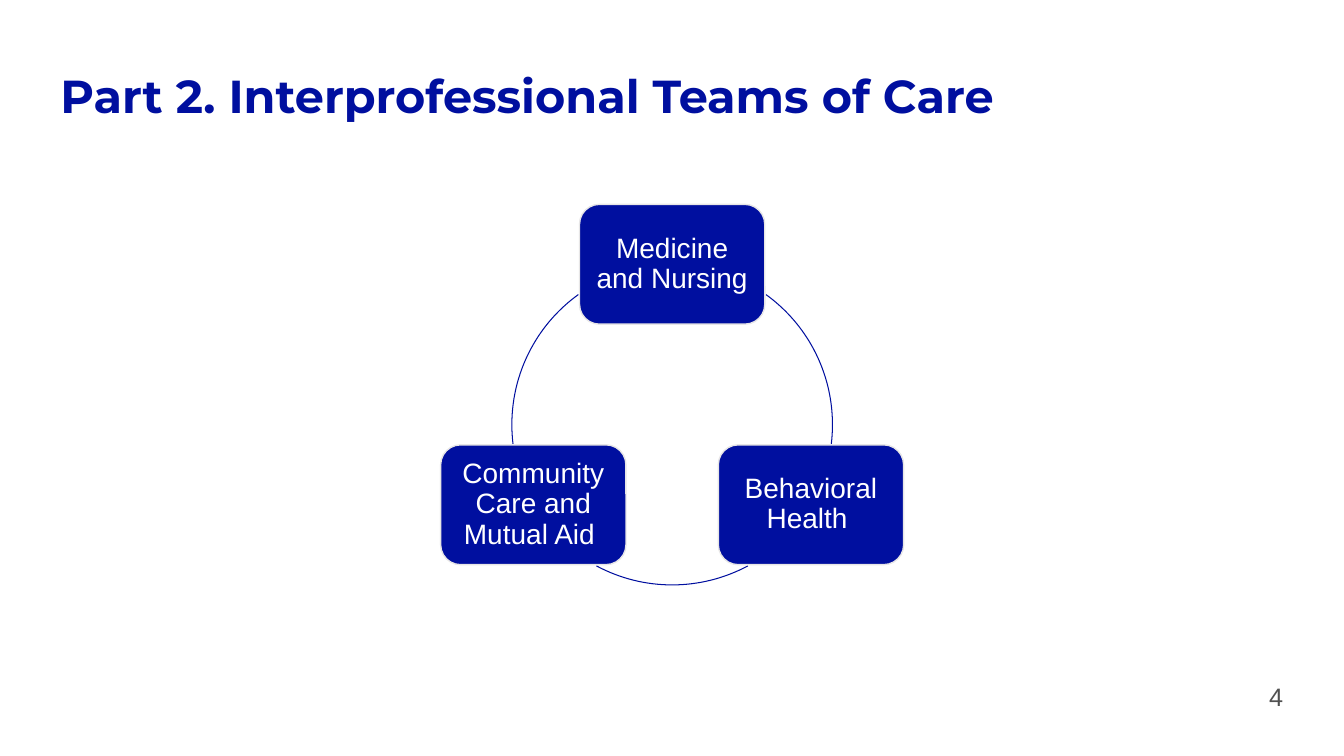
from math import cos, radians, sin

from pptx import Presentation
from pptx.dml.color import RGBColor
from pptx.enum.shapes import MSO_SHAPE
from pptx.enum.text import MSO_ANCHOR, MSO_AUTO_SIZE, PP_ALIGN
from pptx.oxml.ns import qn
from pptx.util import Cm, Pt

TITLE = "Part 2. Interprofessional Teams of Care"
PAGE_NUMBER = "4"
# Team name and its angle on the circle, clockwise from the right
TEAMS = [
    ("Medicine and Nursing", 270),
    ("Behavioral Health ", 30),
    ("Community Care and Mutual Aid ", 150),
]
# Start and end angles of the visible parts of the circle
ARCS = [(305.8, 6.9), (61.8, 118.2), (173.1, 234.2)]

COLORS = {"navy": "000F9F", "border": "E7E6E6", "white": "FFFFFF", "gray": "515151"}
CENTER_X, CENTER_Y, RADIUS = 16.94, 10.7, 4.04
TEAM_WIDTH, TEAM_HEIGHT = 4.67, 3.02
ARC_UNITS_PER_DEGREE = 0.6

TITLE_FORMAT = {"name": "Montserrat", "size": Pt(33), "bold": True}
TEAM_FORMAT = {"name": "Arial", "size": Pt(20)}
NUMBER_FORMAT = {"name": "Arial", "size": Pt(18)}


def color(name):
    return RGBColor.from_string(COLORS[name])


def write(shape, text, font_format, font_color, alignment, anchor, line_spacing=0.9):
    frame = shape.text_frame
    frame.text = text
    frame.word_wrap = True
    frame.auto_size = MSO_AUTO_SIZE.NONE
    frame.vertical_anchor = anchor
    paragraph = frame.paragraphs[0]
    paragraph.alignment = alignment
    paragraph.line_spacing = line_spacing
    font = paragraph.runs[0].font
    for name, value in font_format.items():
        setattr(font, name, value)
    font.color.rgb = color(font_color)


def outline(shape, line_color, width):
    shape.shadow.inherit = False
    shape.line.color.rgb = color(line_color)
    shape.line.width = Pt(width)


def add_title(slide):
    title = slide.shapes.title
    title.left, title.top, title.width, title.height = Cm(1.27), Cm(0.43), Cm(27.79), Cm(2.82)
    write(title, TITLE, TITLE_FORMAT, "navy", PP_ALIGN.LEFT, MSO_ANCHOR.BOTTOM)


def add_arc(slide, start, end):
    arc = slide.shapes.add_shape(
        MSO_SHAPE.ARC, Cm(CENTER_X - RADIUS), Cm(CENTER_Y - RADIUS),
        Cm(2 * RADIUS), Cm(2 * RADIUS))
    arc.adjustments[0] = start * ARC_UNITS_PER_DEGREE
    arc.adjustments[1] = end * ARC_UNITS_PER_DEGREE
    arc.fill.background()
    outline(arc, "navy", 0.75)


def add_team(slide, name, angle):
    middle_x = CENTER_X + RADIUS * cos(radians(angle))
    middle_y = CENTER_Y + RADIUS * sin(radians(angle))
    box = slide.shapes.add_shape(
        MSO_SHAPE.ROUNDED_RECTANGLE, Cm(middle_x - TEAM_WIDTH / 2),
        Cm(middle_y - TEAM_HEIGHT / 2), Cm(TEAM_WIDTH), Cm(TEAM_HEIGHT))
    box.fill.solid()
    box.fill.fore_color.rgb = color("navy")
    outline(box, "border", 1)
    for side in ("left", "top", "right", "bottom"):
        setattr(box.text_frame, f"margin_{side}", Cm(0.2))
    write(box, name, TEAM_FORMAT, "white", PP_ALIGN.CENTER, MSO_ANCHOR.MIDDLE)


def add_page_number(slide):
    box = slide.shapes.add_textbox(Cm(24.97), Cm(17.04), Cm(7.62), Cm(1.02))
    write(box, PAGE_NUMBER, NUMBER_FORMAT, "gray", PP_ALIGN.RIGHT, MSO_ANCHOR.TOP, 1.0)


def main():
    presentation = Presentation()
    presentation.slide_width, presentation.slide_height = Cm(33.87), Cm(19.05)
    slide = presentation.slides.add_slide(presentation.slide_layouts.get_by_name("Title Only"))
    add_title(slide)
    for start, end in ARCS:
        add_arc(slide, start, end)
    for name, angle in TEAMS:
        add_team(slide, name, angle)
    add_page_number(slide)
    presentation.save("out.pptx")


if __name__ == "__main__":
    main()
